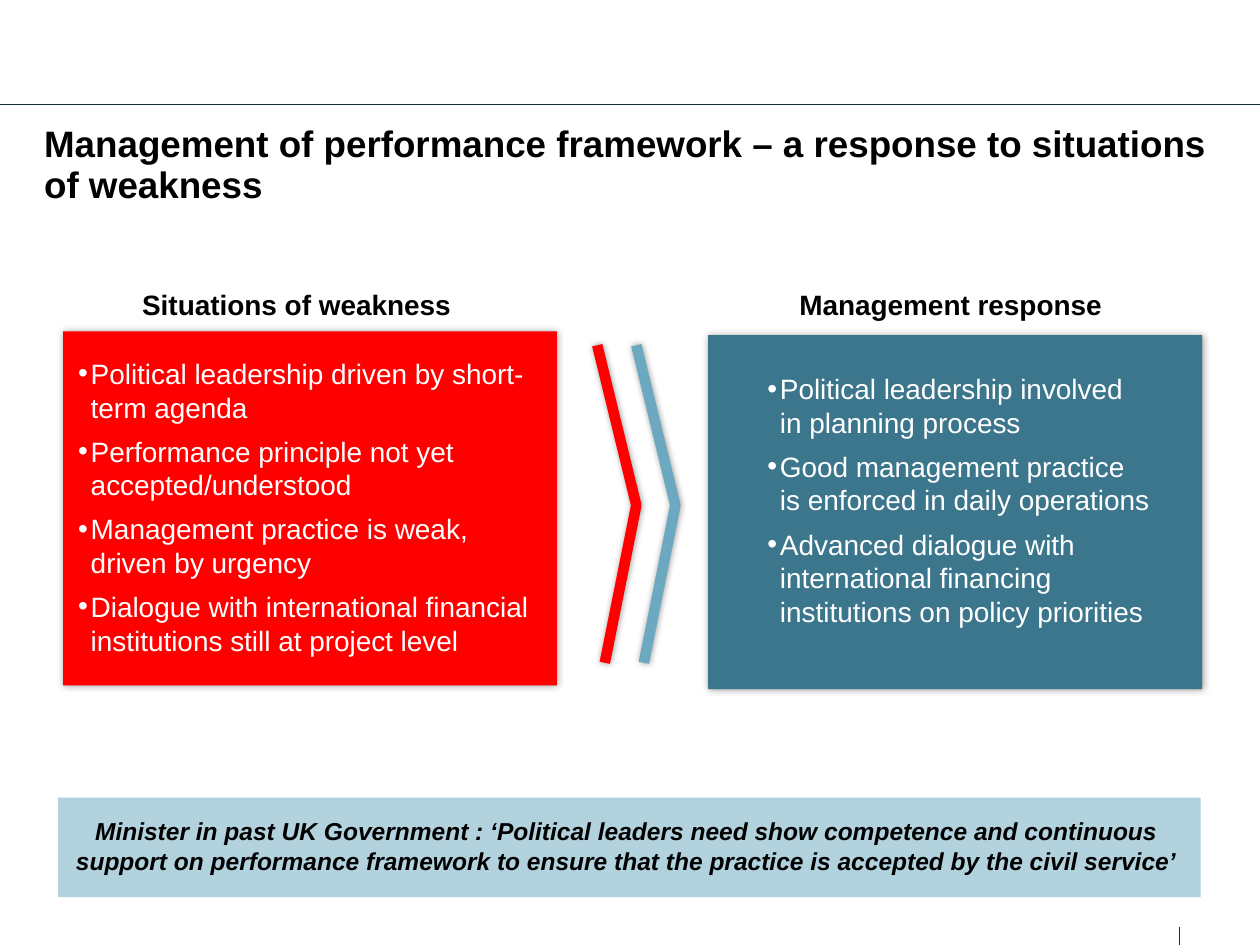
import dataclasses

import lxml.etree
import pptx
import pptx.dml.color
import pptx.enum.shapes
import pptx.enum.text
import pptx.oxml.ns
import pptx.shapes.autoshape
import pptx.slide
import pptx.util

RGB = pptx.dml.color.RGBColor
ALIGN = pptx.enum.text.PP_ALIGN
BLACK = RGB(0, 0, 0)
WHITE = RGB(0xFF, 0xFF, 0xFF)
RED = RGB(0xFF, 0, 0)
TEAL = RGB(0x3C, 0x76, 0x8C)
BLUE = RGB(0x6C, 0xA9, 0xC0)
PALE = RGB(0xB2, 0xD2, 0xDE)
DARK = RGB(0x17, 0x2F, 0x37)

WIDE, HIGH = pptx.util.Inches(10), pptx.util.Inches(7.5)
COLS, ROWS = 100, 75
INDENT = 1


@dataclasses.dataclass
class Area:
    """A place on the grid, in columns and rows."""

    col: float
    row: float
    wide: float
    high: float

    def spot(self) -> tuple[int, int, int, int]:
        """Return left, top, width and height in EMU."""
        return across(self.col), down(self.row), across(self.wide), down(self.high)


@dataclasses.dataclass
class Style:
    """The look of the paragraphs in a text box."""

    size: float
    color: RGB = BLACK
    bold: bool = True
    italic: bool = False
    align: ALIGN = ALIGN.LEFT
    wrap: bool = True
    bullet: bool = False
    lead: float = 1.0


@dataclasses.dataclass
class Panel:
    """A headed, filled list of points."""

    head: str
    label: Area
    box: Area
    fill: RGB
    body: Area
    points: list[str]


TITLE = Style(21, lead=0.93)
HEAD = Style(16, align=ALIGN.CENTER, wrap=False)
POINT = Style(16, WHITE, bold=False, bullet=True)
QUOTE = Style(14, italic=True, align=ALIGN.CENTER)

PANELS = [
    Panel(
        "Management response ", Area(63.3, 22.8, 24.9, 2.7),
        Area(56.2, 26.6, 39.2, 28.1), TEAL, Area(60.9, 29.5, 30.5, 20.5),
        [
            "Political leadership involved in planning process",
            "Good management practice is enforced in daily operations",
            "Advanced dialogue with international financing institutions on policy priorities",
        ],
    ),
    Panel(
        "Situations of weakness ", Area(11.1, 22.8, 25.5, 2.7),
        Area(5, 26.3, 39.2, 28.1), RED, Area(6.2, 28.3, 37.5, 24.1),
        [
            "Political leadership driven by short-term agenda",
            "Performance principle not yet accepted/understood",
            "Management practice is weak, driven by urgency",
            "Dialogue with international financial institutions still at project level",
        ],
    ),
]
RULES = [(93.6, 73.6, 93.6, 75), (0, 8.3, 100, 8.3)]
ARROWS = [(50.5, BLUE), (47.4, RED)]
BEND = [(0, 27.4), (3.1, 40.1), (0.6, 52.6)]


def across(cols: float) -> int:
    """Turn columns into EMU."""
    return round(WIDE * cols / COLS)


def down(rows: float) -> int:
    """Turn rows into EMU."""
    return round(HIGH * rows / ROWS)


def add_tag(parent: lxml.etree._Element, name: str, **attrs: str) -> lxml.etree._Element:
    """Append a drawing element to its parent."""
    return lxml.etree.SubElement(parent, pptx.oxml.ns.qn(name), attrs)


def add_glow(shape: pptx.shapes.autoshape.Shape) -> None:
    """Give a shape a soft dark shadow."""
    shape.shadow.inherit = False
    effects = shape._element.spPr.find(pptx.oxml.ns.qn("a:effectLst"))
    blur = str(pptx.util.Pt(4))
    shade = add_tag(effects, "a:outerShdw", blurRad=blur, dist="0", dir="5400000", rotWithShape="0")
    add_tag(add_tag(shade, "a:srgbClr", val=str(BLACK)), "a:alpha", val="40000")


def add_block(slide: pptx.slide.Slide, area: Area, fill: RGB) -> pptx.shapes.autoshape.Shape:
    """Draw a plain filled rectangle."""
    block = slide.shapes.add_shape(pptx.enum.shapes.MSO_SHAPE.RECTANGLE, *area.spot())
    block.shadow.inherit = False
    block.fill.solid()
    block.fill.fore_color.rgb = fill
    block.line.fill.background()
    return block


def add_text(slide: pptx.slide.Slide, area: Area, lines: list[str], style: Style) -> None:
    """Write paragraphs in one style."""
    frame = slide.shapes.add_textbox(*area.spot()).text_frame
    frame.margin_left = frame.margin_right = frame.margin_top = frame.margin_bottom = 0
    frame.word_wrap = style.wrap
    frame.text = "\n".join(lines)
    for para in frame.paragraphs:
        para.alignment = style.align
        para.line_spacing = style.lead
        if style.bullet:
            props = para._p.get_or_add_pPr()
            props.set("marL", str(across(INDENT)))
            props.set("indent", str(-across(INDENT)))
            add_tag(props, "a:buFont", typeface="Arial")
            add_tag(props, "a:buChar", char="•")
        para.font.name = "Arial"
        para.font.size = pptx.util.Pt(style.size)
        para.font.bold = style.bold
        para.font.italic = style.italic
        para.font.color.rgb = style.color
    for para in frame.paragraphs[:-1]:
        para.space_after = pptx.util.Pt(6)


def add_rule(slide: pptx.slide.Slide, ends: tuple[float, float, float, float]) -> None:
    """Draw a thin straight line."""
    left, top, right, base = ends
    rule = slide.shapes.add_connector(
        pptx.enum.shapes.MSO_CONNECTOR.STRAIGHT,
        across(left), down(top), across(right), down(base),
    )
    rule.line.color.rgb = DARK
    rule.line.width = pptx.util.Pt(0.75)
    add_tag(rule._element.spPr, "a:effectLst")


def add_arrow(slide: pptx.slide.Slide, left: float, color: RGB) -> None:
    """Draw an open bent line that points right."""
    spots = [(across(left + col), down(row)) for col, row in BEND]
    pen = slide.shapes.build_freeform(*spots[0])
    pen.add_line_segments(spots[1:], close=False)
    arrow = pen.convert_to_shape()
    arrow.fill.background()
    arrow.line.color.rgb = color
    arrow.line.width = pptx.util.Pt(6)
    add_glow(arrow)


def main() -> None:
    """Build and save the slide."""
    deck = pptx.Presentation()
    deck.slide_width, deck.slide_height = WIDE, HIGH
    slide = deck.slides.add_slide(deck.slide_layouts[6])
    for ends in RULES:
        add_rule(slide, ends)
    title = "Management of performance framework – a response to situations of weakness"
    add_text(slide, Area(3.5, 9.9, 93.1, 9), [title], TITLE)
    for panel in PANELS:
        add_glow(add_block(slide, panel.box, panel.fill))
        add_text(slide, panel.label, [panel.head], HEAD)
        add_text(slide, panel.body, panel.points, POINT)
    for left, color in ARROWS:
        add_arrow(slide, left, color)
    add_block(slide, Area(4.6, 63.3, 90.7, 7.9), PALE)
    quote = (
        "Minister in past UK Government : ‘Political leaders need show competence and continuous "
        "support on performance framework to ensure that the practice is accepted by the civil service’"
    )
    add_text(slide, Area(5.3, 64.8, 88.9, 4.7), [quote], QUOTE)
    deck.save("out.pptx")


if __name__ == "__main__":
    main()
